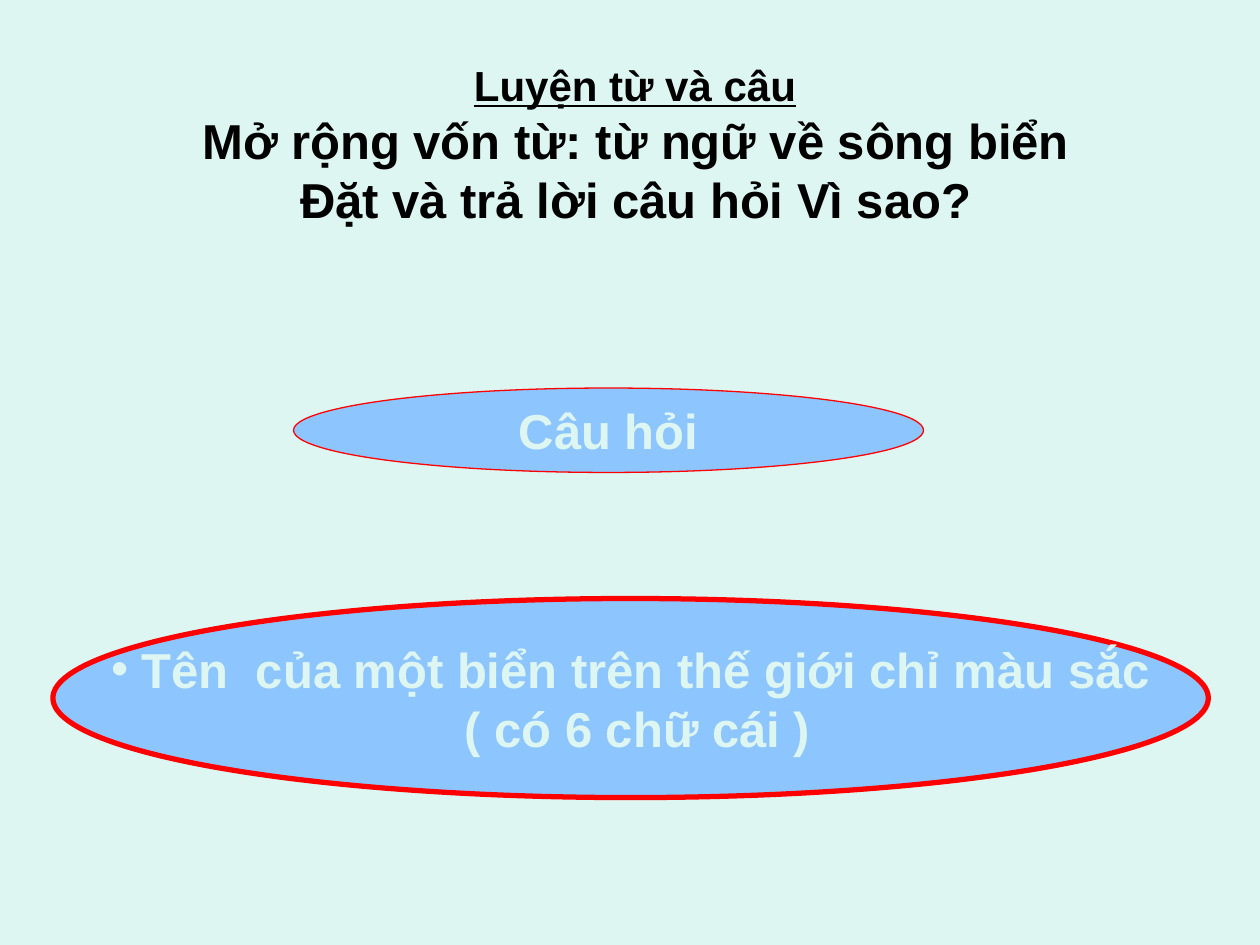
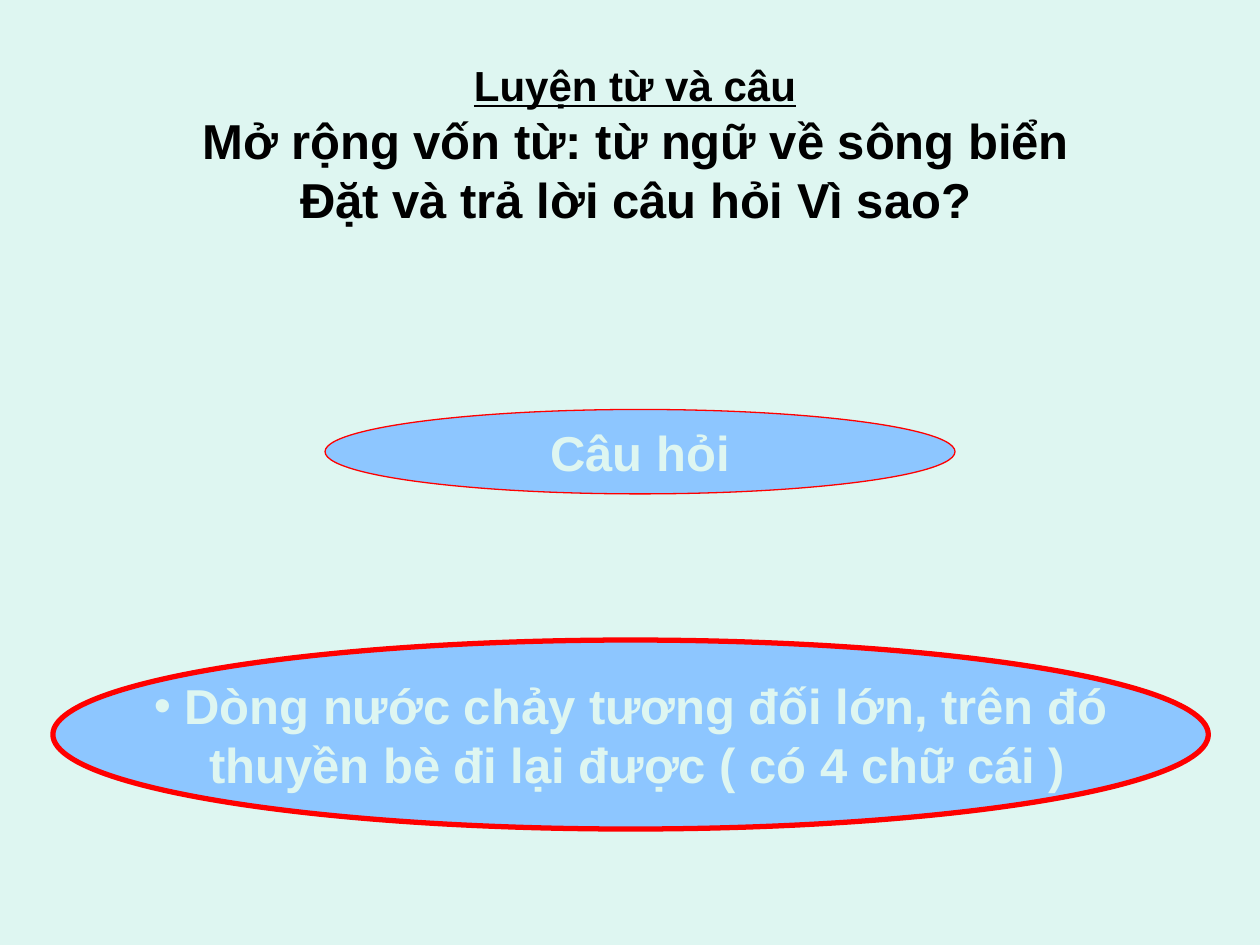
from lxml import etree
from pptx import Presentation
from pptx.dml.color import RGBColor
from pptx.enum.shapes import MSO_SHAPE
from pptx.enum.text import MSO_ANCHOR, PP_ALIGN
from pptx.oxml.ns import qn
from pptx.util import Inches, Pt

OVAL = MSO_SHAPE.OVAL
TOP, MIDDLE = MSO_ANCHOR.TOP, MSO_ANCHOR.MIDDLE
CENTER = PP_ALIGN.CENTER

COLORS = {"background": "DEF6F1", "oval": "8DC6FF", "outline": "FF0000", "title": "000000"}

SUBJECT = ["Luyện từ và câu"]
TITLE = ["Mở rộng vốn từ: từ ngữ về sông biển", "Đặt và trả lời câu hỏi Vì sao?"]
LABEL = ["Câu hỏi"]
SUBJECT_BOX = (2.58, 0.42, 4.92, 0.5)
TITLE_BOX = (1.17, 0.83, 7.75, 1.25)

QUESTIONS = [
    {
        "label_box": (2.33, 3.08, 5, 0.67),
        "clue_box": (0.42, 4.75, 9.17, 1.58),
        "clue": [" Tên  của một biển trên thế giới chỉ màu sắc", " ( có 6 chữ cái )"],
    },
    {
        "label_box": (2.58, 3.25, 5, 0.67),
        "clue_box": (0.42, 5.08, 9.17, 1.5),
        "clue": [" Dòng nước chảy tương đối lớn, trên đó", " thuyền bè đi lại được ( có 4 chữ cái )"],
    },
]

BASE_FONT = {"name": "Arial", "size": Pt(28), "bold": True}
SUBJECT_FONT = {**BASE_FONT, "size": Pt(24), "underline": True}


def color(name):
    return RGBColor.from_string(COLORS[name])


def add_bullet(paragraph):
    properties = paragraph._p.get_or_add_pPr()
    etree.SubElement(properties, qn("a:buFont")).set("typeface", "Arial")
    etree.SubElement(properties, qn("a:buChar")).set("char", "•")


def write_lines(shape, lines, color_name, font=BASE_FONT, anchor=TOP, bullet=False):
    frame = shape.text_frame
    frame.word_wrap = False
    frame.vertical_anchor = anchor
    for index, line in enumerate(lines):
        paragraph = frame.add_paragraph() if index else frame.paragraphs[0]
        paragraph.alignment = CENTER
        if bullet and index == 0:
            add_bullet(paragraph)
        run = paragraph.add_run()
        run.text = line
        for name, value in font.items():
            setattr(run.font, name, value)
        run.font.color.rgb = color(color_name)


def add_heading(slide, box, lines, font=BASE_FONT):
    shape = slide.shapes.add_textbox(*map(Inches, box))
    write_lines(shape, lines, "title", font)


def add_oval(slide, box, lines, line_width, bullet=False):
    shape = slide.shapes.add_shape(OVAL, *map(Inches, box))
    shape.shadow.inherit = False
    shape.fill.solid()
    shape.fill.fore_color.rgb = color("oval")
    shape.line.color.rgb = color("outline")
    shape.line.width = Pt(line_width)
    write_lines(shape, lines, "background", anchor=MIDDLE, bullet=bullet)


def add_question(presentation, question):
    slide = presentation.slides.add_slide(presentation.slide_layouts[6])
    slide.background.fill.solid()
    slide.background.fill.fore_color.rgb = color("background")
    add_oval(slide, question["label_box"], LABEL, 0.75)
    add_oval(slide, question["clue_box"], question["clue"], 3, bullet=True)
    add_heading(slide, TITLE_BOX, TITLE)
    add_heading(slide, SUBJECT_BOX, SUBJECT, SUBJECT_FONT)


def main():
    presentation = Presentation()
    presentation.slide_width = Inches(10)
    presentation.slide_height = Inches(7.5)
    for question in QUESTIONS:
        add_question(presentation, question)
    presentation.save("out.pptx")


if __name__ == "__main__":
    main()
